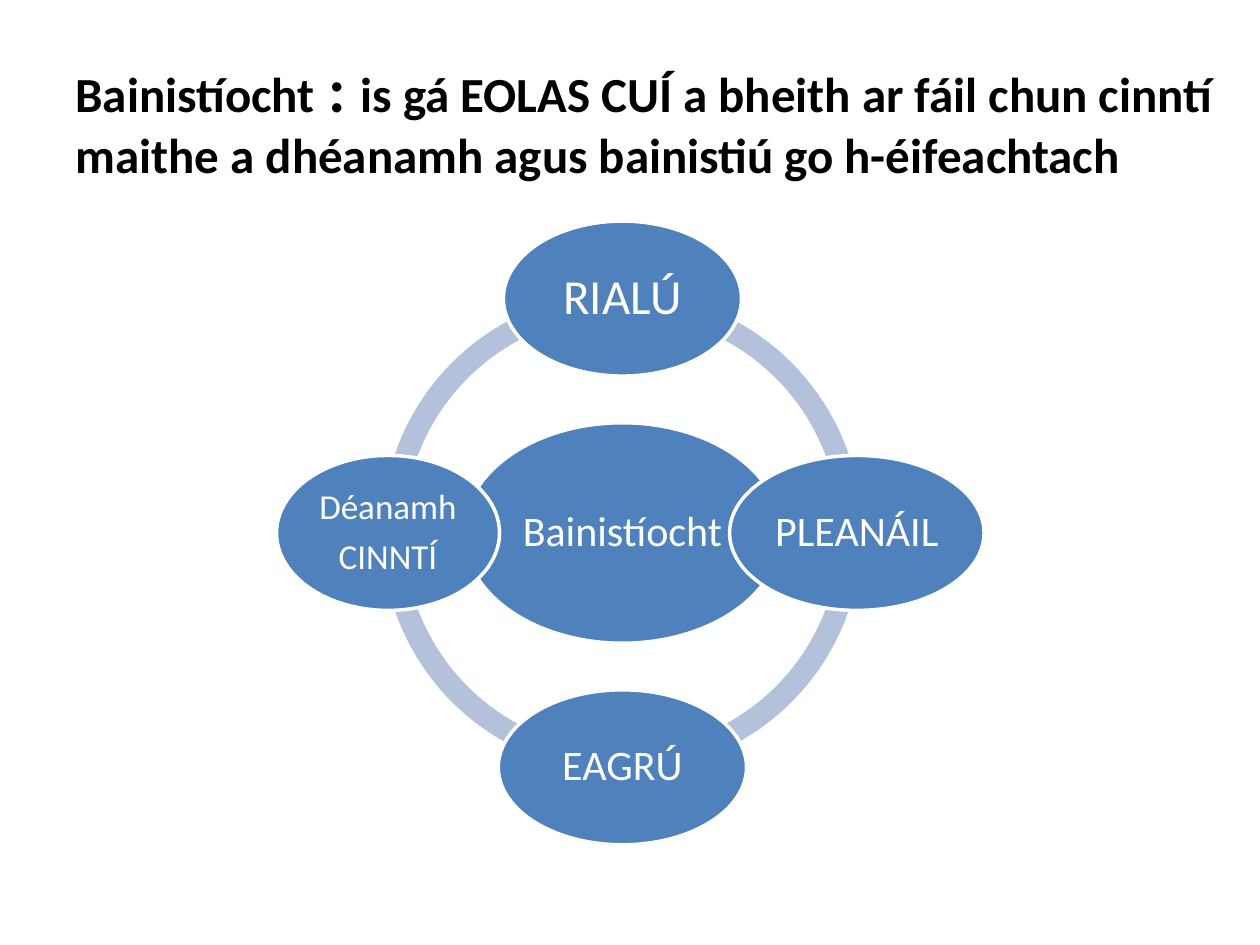
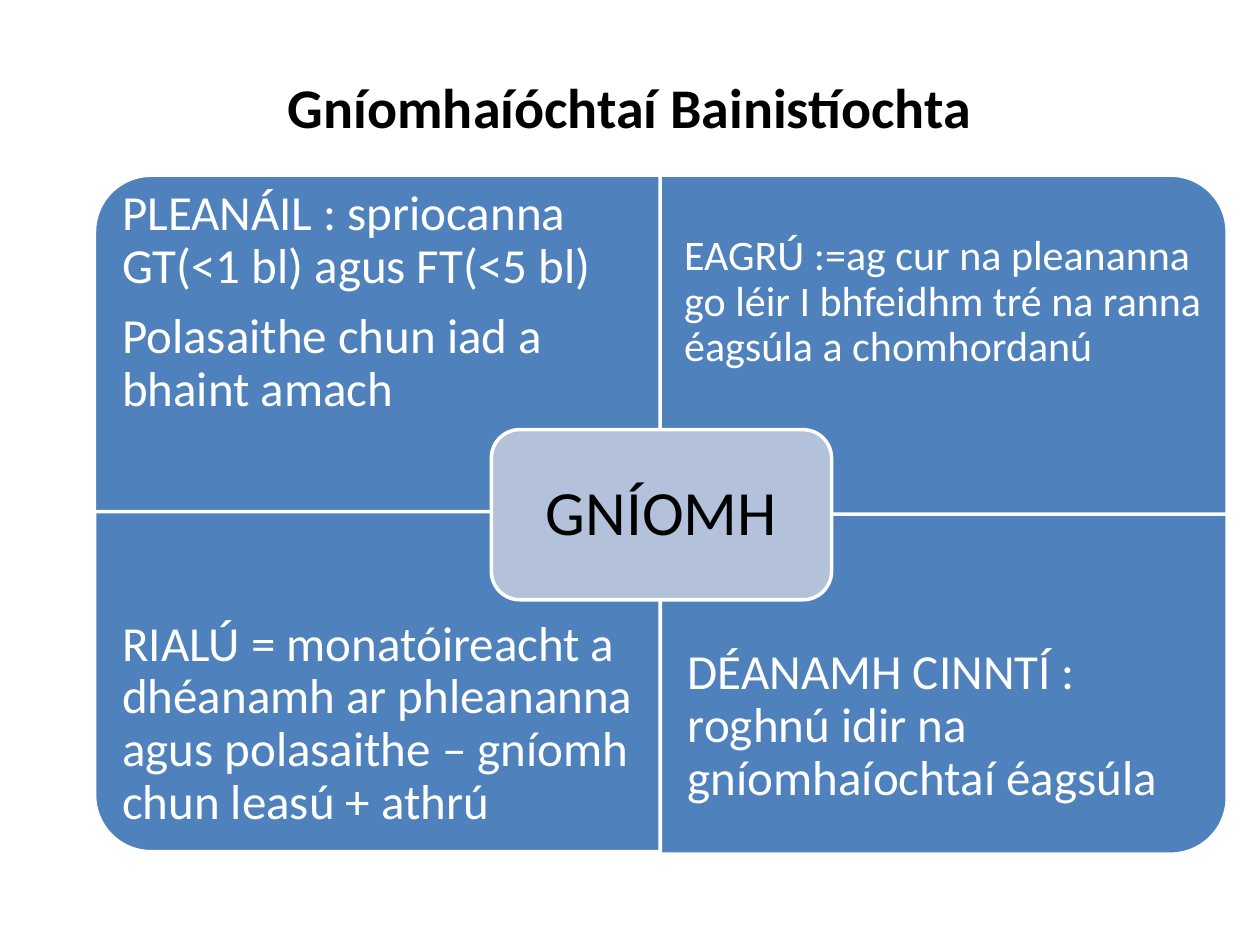
import pptx
import pptx.util
import pptx.dml.color
import pptx.enum.shapes
import pptx.enum.text

Inches, Pt = pptx.util.Inches, pptx.util.Pt
RGB = pptx.dml.color.RGBColor
SHAPE = pptx.enum.shapes.MSO_SHAPE
ALIGN = pptx.enum.text.PP_ALIGN
BLUE = RGB(0x4F, 0x81, 0xBD)
PALE = RGB(0xB3, 0xC1, 0xDB)
WHITE = RGB(0xFF, 0xFF, 0xFF)
BLACK = RGB(0, 0, 0)
FONT = "Calibri"


def draw(slide, kind, box, fill, edged=True):
    shape = slide.shapes.add_shape(kind, *map(Inches, box))
    shape.shadow.inherit = False
    shape.fill.solid()
    shape.fill.fore_color.rgb = fill
    if edged:
        shape.line.color.rgb = WHITE
        shape.line.width = Pt(2)
    else:
        shape.line.fill.background()
    return shape


def write(shape, lines, size, inset, color=WHITE, align=ALIGN.CENTER):
    frame = shape.text_frame
    frame.word_wrap = True
    frame.vertical_anchor = pptx.enum.text.MSO_ANCHOR.MIDDLE
    frame.margin_left = frame.margin_right = Inches(inset)
    frame.margin_top = frame.margin_bottom = Inches(inset)
    frame.text = "\n".join(lines)
    for para in frame.paragraphs:
        para.alignment = align
        para.line_spacing = 0.9
        para.space_after = Pt(size * 0.35)
        para.font.name = FONT
        para.font.size = Pt(size)
        para.font.color.rgb = color


deck = pptx.Presentation()
deck.slide_width, deck.slide_height = Inches(10), Inches(7.5)

# Titles: box, alignment, runs with sizes
titles = [
    ((0.5, 0.3, 9.38, 1.25), ALIGN.LEFT, [
        ("Bainistíocht", 28), (" : ", 36),
        ("is gá EOLAS CUÍ a bheith ar fáil chun cinntí maithe a dhéanamh "
         "agus bainistiú go h-éifeachtach", 28)]),
    ((0.5, 0.3, 9, 1.09), ALIGN.CENTER, [("Gníomhaíóchtaí Bainistíochta", 32)]),
]
for box, align, parts in titles:
    slide = deck.slides.add_slide(deck.slide_layouts[5])
    title = slide.shapes.title
    title.left, title.top, title.width, title.height = map(Inches, box)
    title.text_frame.auto_size = pptx.enum.text.MSO_AUTO_SIZE.NONE
    title.text_frame.vertical_anchor = pptx.enum.text.MSO_ANCHOR.MIDDLE
    para = title.text_frame.paragraphs[0]
    para.alignment = align
    para.font.name = FONT
    para.font.bold = True
    para.font.color.rgb = BLACK
    for text, size in parts:
        run = para.add_run()
        run.text = text
        run.font.size = Pt(size)
cycle, matrix = deck.slides

# Ring of four quarter arcs; adjustments are raw angles / 100000
for start, end in [(108, 162), (54, 108), (0, 54), (162, 0)]:
    arc = draw(cycle, SHAPE.BLOCK_ARC, (3.03, 2.32, 3.81, 3.81), PALE, False)
    for i, value in enumerate((start, end, 0.046)):
        arc.adjustments[i] = value

# Ellipses: offset from the hub, size, text
HUB_X, HUB_Y, REACH = 4.94, 4.23, 1.86
ovals = [
    (0, 0, 2.52, 1.75, ["Bainistíocht"], 24),
    (0, -1, 1.89, 1.23, ["RIALÚ"], 28),
    (1, 0, 2.02, 1.23, ["PLEANÁIL"], 24),
    (0, 1, 1.97, 1.23, ["EAGRÚ"], 24),
    (-1, 0, 1.77, 1.23, ["Déanamh", "CINNTÍ"], 20),
]
for dx, dy, wide, high, lines, size in ovals:
    left = HUB_X + dx * REACH - wide / 2
    top = HUB_Y + dy * REACH - high / 2
    oval = draw(cycle, SHAPE.OVAL, (left, top, wide, high), BLUE)
    write(oval, lines, size, 0.03)

# Quadrants: corner, turn, top of the text, text
WIDE, HIGH = 4.5, 2.7
quads = [
    (0.75, 1.39, 270, 1.39, 28, 0.22,
     ["PLEANÁIL : spriocanna GT(<1 bl) agus FT(<5 bl)",
      "Polasaithe chun iad a bhaint amach"]),
    (5.24, 1.39, 0, 1.39, 24, 0.19,
     ["EAGRÚ :=ag cur na pleananna go léir I bhfeidhm tré na ranna "
      "éagsúla a chomhordanú"]),
    (0.75, 4.06, 180, 4.74, 28, 0.22,
     ["RIALÚ = monatóireacht a dhéanamh ar phleananna agus polasaithe "
      "– gníomh chun leasú + athrú"]),
    (5.24, 4.08, 90, 4.76, 28, 0.22,
     ["DÉANAMH CINNTÍ : roghnú idir na gníomhaíochtaí éagsúla"]),
]
for left, top, turn, head, size, inset, lines in quads:
    # A quarter turn swaps width and height about the centre
    swap = (WIDE - HIGH) / 2 if turn % 180 else 0
    box = (left + swap, top - swap, WIDE - 2 * swap, HIGH + 2 * swap)
    quad = draw(matrix, SHAPE.ROUND_1_RECTANGLE, box, BLUE)
    quad.rotation = turn
    label = matrix.shapes.add_textbox(*map(Inches, (left, head, WIDE, 2.02)))
    write(label, lines, size, inset, align=ALIGN.LEFT)

core = draw(matrix, SHAPE.ROUNDED_RECTANGLE, (3.9, 3.41, 2.7, 1.35), PALE)
write(core, ["GNÍOMH"], 36, 0.15, BLACK)

deck.save("out.pptx")
